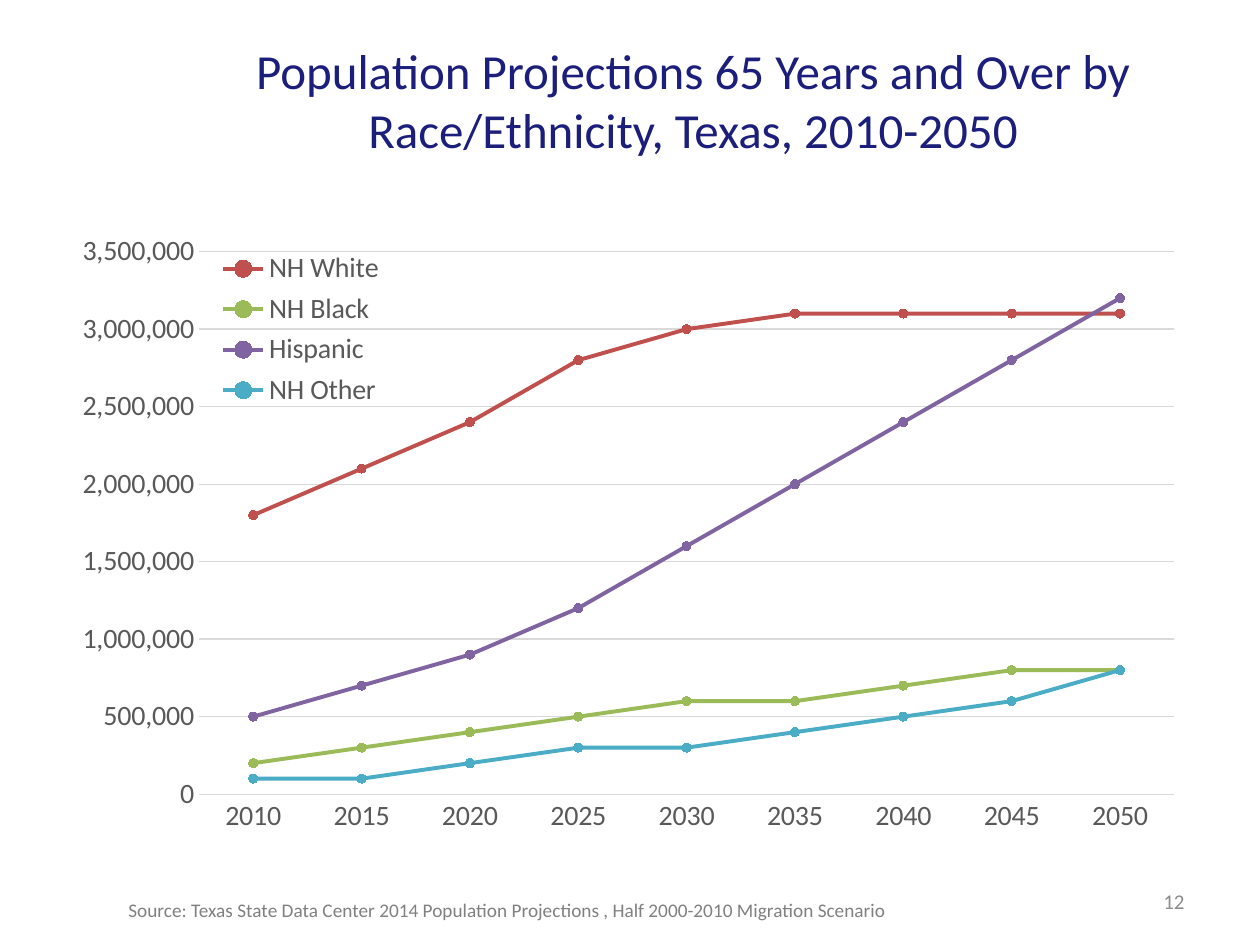
from lxml.etree import SubElement
from pptx import Presentation
from pptx.chart.data import CategoryChartData
from pptx.dml.color import RGBColor
from pptx.enum.chart import XL_CHART_TYPE, XL_LEGEND_POSITION, XL_MARKER_STYLE, XL_TICK_MARK
from pptx.enum.text import MSO_ANCHOR, PP_ALIGN
from pptx.oxml.ns import qn
from pptx.util import Inches, Pt

FONT = "Calibri"
COLORS = {
    "title": "1B1E7A", "number": "8C8C8C", "source": "808080",
    "label": "595959", "grid": "D9D9D9",
    "NH White": "C0504D", "NH Black": "9BBB59",
    "Hispanic": "8064A2", "NH Other": "4BACC6",
}
COUNTS = {
    "NH White": (18, 21, 24, 28, 30, 31, 31, 31, 31),
    "NH Black": (2, 3, 4, 5, 6, 6, 7, 8, 8),
    "Hispanic": (5, 7, 9, 12, 16, 20, 24, 28, 32),
    "NH Other": (1, 1, 2, 3, 3, 4, 5, 6, 8),
}
UNIT = 100000

deck = Presentation()
deck.slide_width, deck.slide_height = Inches(10), Inches(7.5)
slide = deck.slides.add_slide(deck.slide_layouts[6])


def style(font, size, color):
    font.name = FONT
    font.size = Pt(size)
    font.color.rgb = RGBColor.from_string(COLORS[color])


def place(parent, before, inner, *shares):
    old = parent.find(qn("c:layout"))
    if old is not None:
        parent.remove(old)
    layout = parent.makeelement(qn("c:layout"))
    parent.find(qn(before)).addprevious(layout)
    manual = SubElement(layout, qn("c:manualLayout"))
    if inner:
        SubElement(manual, qn("c:layoutTarget"), val="inner")
    for tag in ("xMode", "yMode"):
        SubElement(manual, qn("c:" + tag), val="edge")
    for tag, share in zip("xywh", shares):
        SubElement(manual, qn("c:" + tag), val=str(share))


data = CategoryChartData(number_format="#,##0")
data.categories = [str(year) for year in range(2010, 2051, 5)]
for name, counts in COUNTS.items():
    data.add_series(name, [count * UNIT for count in counts])
chart = slide.shapes.add_chart(
    XL_CHART_TYPE.LINE_MARKERS, Inches(0.5), Inches(1.75), Inches(9), Inches(4.95), data
).chart
style(chart.font, 16, "label")
chart.has_title = False
chart.plots[0].vary_by_categories = False

for series in chart.plots[0].series:
    color = RGBColor.from_string(COLORS[series.name])
    series.smooth = False
    series.format.line.color.rgb = color
    series.format.line.width = Pt(2.25)
    marker = series.marker
    marker.style = XL_MARKER_STYLE.CIRCLE
    marker.size = 5
    marker.format.fill.solid()
    marker.format.fill.fore_color.rgb = color
    marker.format.line.color.rgb = color

years, people = chart.category_axis, chart.value_axis
people.minimum_scale, people.maximum_scale, people.major_unit = 0, 35 * UNIT, 5 * UNIT
people.has_major_gridlines = True
people.tick_labels.number_format = "#,##0"
people.tick_labels.number_format_is_linked = False
people.format.line.fill.background()
for axis in (years, people):
    axis.major_tick_mark = axis.minor_tick_mark = XL_TICK_MARK.NONE
    style(axis.tick_labels.font, 16, "label")
for line in (years.format.line, people.major_gridlines.format.line):
    line.color.rgb = RGBColor.from_string(COLORS["grid"])
    line.width = Pt(0.75)

chart.has_legend = True
legend = chart.legend
legend.position = XL_LEGEND_POSITION.CORNER
legend.include_in_layout = False
style(legend.font, 16, "label")
plot = chart.plots[0]
area = chart.element.find(".//" + qn("c:plotArea"))
place(area, "c:lineChart", True, 0.12, 0.05, 0.86, 0.87)
place(legend.element if hasattr(legend, "element") else area.getnext(),
      "c:overlay", False, 0.13, 0.04, 0.16, 0.27)
legend.include_in_layout = True

TEXTS = (
    ("Population Projections 65 Years and Over by Race/Ethnicity, Texas, 2010-2050",
     (1.75, 0.25, 7.5, 1.08), 28, "title", PP_ALIGN.CENTER, MSO_ANCHOR.MIDDLE),
    ("12", (7.17, 6.95, 2.33, 0.4), 12, "number", PP_ALIGN.RIGHT, MSO_ANCHOR.MIDDLE),
    ("Source: Texas State Data Center 2014 Population Projections , Half 2000-2010 Migration Scenario",
     (0.92, 7.08, 9.08, 0.29), 11, "source", PP_ALIGN.LEFT, MSO_ANCHOR.TOP),
)
for text, spot, size, color, align, anchor in TEXTS:
    frame = slide.shapes.add_textbox(*map(Inches, spot)).text_frame
    frame.word_wrap = True
    frame.vertical_anchor = anchor
    frame.text = text
    frame.paragraphs[0].alignment = align
    style(frame.paragraphs[0].runs[0].font, size, color)

deck.save("out.pptx")
